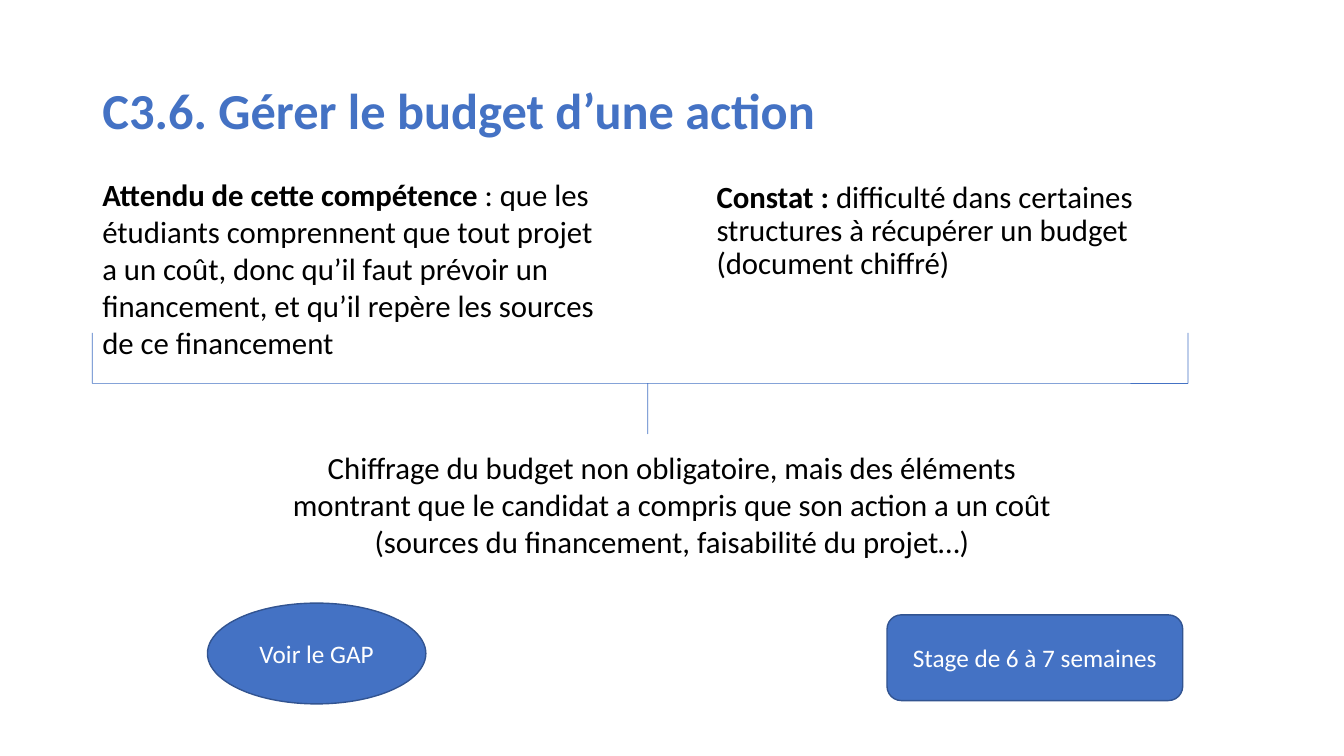
from dataclasses import dataclass

from lxml.etree import SubElement
from pptx import Presentation
from pptx.dml.color import RGBColor
from pptx.enum.shapes import MSO_SHAPE
from pptx.enum.text import MSO_ANCHOR, MSO_AUTO_SIZE, PP_ALIGN
from pptx.oxml.ns import qn
from pptx.util import Inches, Pt

SLIDE_WIDTH, SLIDE_HEIGHT = Inches(13.33), Inches(7.5)
COLUMNS, ROWS = 160, 90


@dataclass(frozen=True)
class Theme:
    font: str = "Calibri"
    accent: RGBColor = RGBColor(0x44, 0x72, 0xC4)
    outline: RGBColor = RGBColor(0x32, 0x54, 0x91)
    text: RGBColor = RGBColor(0, 0, 0)
    light: RGBColor = RGBColor(0xFF, 0xFF, 0xFF)
    title_size: int = 36
    body_size: int = 22
    label_size: int = 18


THEME = Theme()


def grid(column, row, columns, rows):
    """Turn a cell range of the slide grid into left, top, width and height."""
    return (
        int(SLIDE_WIDTH * column / COLUMNS),
        int(SLIDE_HEIGHT * row / ROWS),
        int(SLIDE_WIDTH * columns / COLUMNS),
        int(SLIDE_HEIGHT * rows / ROWS),
    )


def move(shape, area):
    shape.left, shape.top, shape.width, shape.height = area


def write(shape, runs, size=THEME.body_size, color=THEME.text,
          align=PP_ALIGN.LEFT, anchor=MSO_ANCHOR.TOP):
    """Fill the first paragraph with (text, bold) runs and return it."""
    frame = shape.text_frame
    frame.word_wrap = True
    frame.auto_size = MSO_AUTO_SIZE.NONE
    frame.vertical_anchor = anchor
    paragraph = frame.paragraphs[0]
    paragraph.alignment = align
    for text, bold in runs:
        run = paragraph.add_run()
        run.text = text
        run.font.name = THEME.font
        run.font.size = Pt(size)
        run.font.bold = bold
        run.font.color.rgb = color
    return paragraph


def set_title(slide, area, text):
    title = slide.shapes.title
    move(title, area)
    paragraph = write(title, [(text, True)], THEME.title_size, THEME.accent,
                      anchor=MSO_ANCHOR.MIDDLE)
    paragraph.line_spacing = 0.9


def set_body(slide, area, runs):
    body = slide.placeholders[1]
    move(body, area)
    paragraph = write(body, runs)
    paragraph.line_spacing = 0.9
    paragraph.space_before = Pt(10)
    properties = paragraph._p.get_or_add_pPr()
    properties.set("marL", "0")
    properties.set("indent", "0")
    SubElement(properties, qn("a:buNone"))


def add_text(slide, area, runs, align=PP_ALIGN.LEFT):
    write(slide.shapes.add_textbox(*area), runs, align=align)


def add_label(slide, kind, area, text):
    label = slide.shapes.add_shape(kind, *area)
    label.shadow.inherit = False
    label.fill.solid()
    label.fill.fore_color.rgb = THEME.accent
    label.line.color.rgb = THEME.outline
    label.line.width = Pt(1)
    write(label, [(text, False)], THEME.label_size, THEME.light,
          PP_ALIGN.CENTER, MSO_ANCHOR.MIDDLE)


def add_brace(slide, area):
    """Add a square brace turned to point downwards; area is before rotation."""
    brace = slide.shapes.add_shape(MSO_SHAPE.RIGHT_BRACE, *area)
    brace.rotation = 90
    brace.adjustments[0] = 0
    brace.adjustments[1] = 0.493
    brace.shadow.inherit = False
    brace.fill.background()
    brace.line.color.rgb = THEME.accent
    brace.line.width = Pt(0.5)


def main():
    presentation = Presentation()
    presentation.slide_width, presentation.slide_height = SLIDE_WIDTH, SLIDE_HEIGHT
    slide = presentation.slides.add_slide(presentation.slide_layouts[1])

    set_title(slide, grid(11, 4.8, 138, 17.4), "C3.6. Gérer le budget d’une action")
    set_body(slide, grid(84.1, 21, 60.6, 17.4), [
        ("Constat : ", True),
        ("difficulté dans certaines structures à récupérer un budget "
         "(document chiffré)", False),
    ])
    add_text(slide, grid(11, 20.3, 61.9, 23.4), [
        ("Attendu de cette compétence ", True),
        (": que les étudiants comprennent que tout projet a un coût, donc qu’il faut "
         "prévoir un financement, et qu’il repère les sources de ce financement", False),
    ])
    add_brace(slide, grid(70.2, -19.56, 12, 130.4))
    add_text(slide, grid(31.8, 52.8, 96.4, 14.5), [
        ("Chiffrage du budget non obligatoire, mais des éléments montrant que le "
         "candidat a compris que son action a un coût (sources du financement, "
         "faisabilité du projet…)", False),
    ], PP_ALIGN.CENTER)
    add_label(slide, MSO_SHAPE.OVAL, grid(24.7, 71.8, 26, 12), "Voir le GAP")
    add_label(slide, MSO_SHAPE.ROUNDED_RECTANGLE, grid(105.6, 73.2, 35.2, 10.2),
              "Stage de 6 à 7 semaines")

    presentation.save("out.pptx")


if __name__ == "__main__":
    main()
